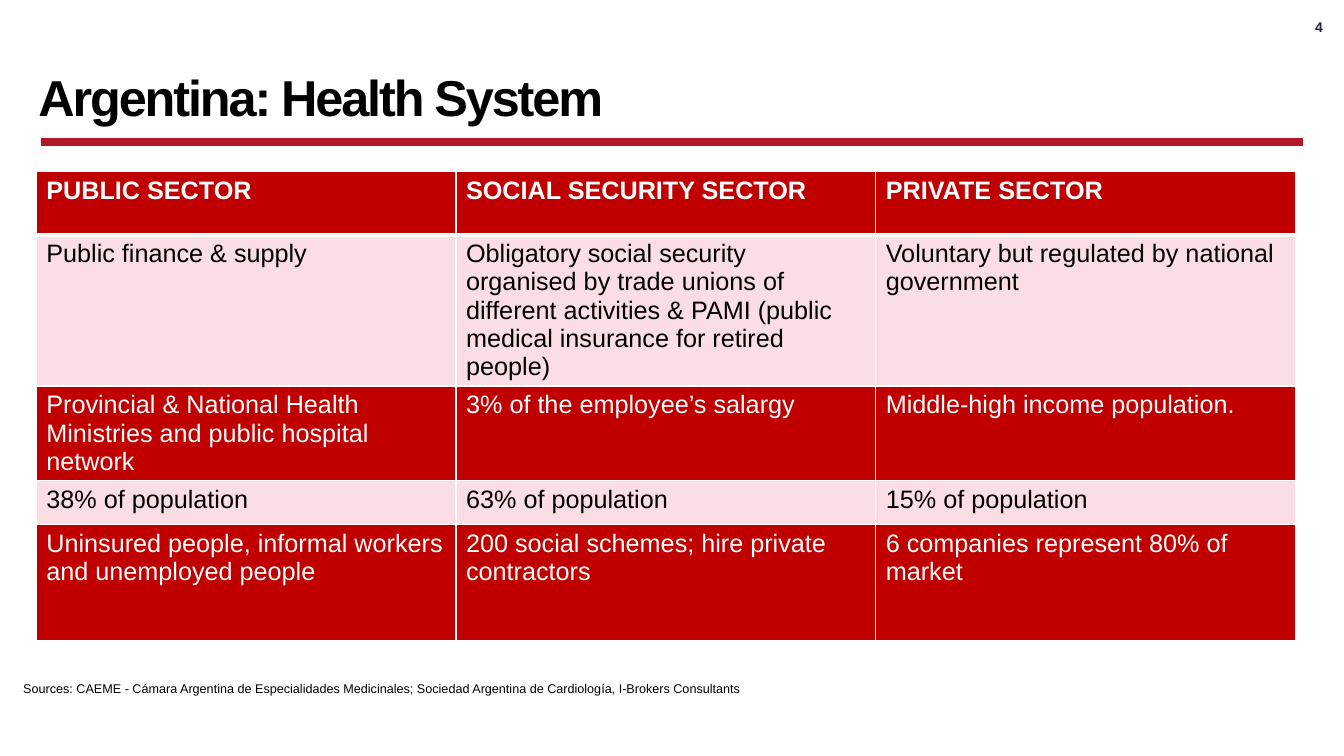
from lxml import etree
from pptx import Presentation
from pptx.dml.color import RGBColor
from pptx.enum.shapes import MSO_CONNECTOR
from pptx.enum.text import MSO_ANCHOR, MSO_AUTO_SIZE, PP_ALIGN
from pptx.oxml.ns import qn
from pptx.util import Inches, Pt

# Content
TITLE = "Argentina: Health System"
SLIDE_NUMBER = "4"
SOURCES = ("Sources: CAEME - Cámara Argentina de Especialidades Medicinales; "
           "Sociedad Argentina de Cardiología, I-Brokers Consultants")
SECTORS = [
    ("PUBLIC SECTOR", "SOCIAL SECURITY SECTOR", "PRIVATE SECTOR"),
    ("Public finance & supply",
     "Obligatory social security\norganised by trade unions of different activities "
     "& PAMI (public medical insurance for retired people)",
     "Voluntary but regulated by national government"),
    ("Provincial & National Health Ministries and public hospital network",
     "3% of the employee’s salargy",
     "Middle-high income population."),
    ("38% of population", "63% of population", "15% of population"),
    ("Uninsured people, informal workers and unemployed people",
     "200 social schemes; hire private contractors",
     "6 companies represent 80% of market"),
]

# Design
FONT = "Arial"
COLORS = {"red": "C00000", "pink": "FBDDE6", "white": "FFFFFF",
          "black": "000000", "rule": "B01925", "number": "241F46"}
TABLE_LEFT, TABLE_TOP, TABLE_WIDTH = 0.36, 1.7, 12.49
ROW_HEIGHTS = [0.63, 1.42, 0.89, 0.43, 1.16]


def color(name):
    return RGBColor.from_string(COLORS[name])


def add_text(paragraph, text, size, color_name, bold=False):
    run = paragraph.add_run()
    run.text = text
    run.font.name = FONT
    run.font.size = Pt(size)
    run.font.bold = bold
    run.font.color.rgb = color(color_name)
    return run


def place(shape, left, top, width, height):
    shape.left, shape.top = Inches(left), Inches(top)
    shape.width, shape.height = Inches(width), Inches(height)
    frame = shape.text_frame
    frame.word_wrap = True
    frame.auto_size = MSO_AUTO_SIZE.NONE
    frame.vertical_anchor = MSO_ANCHOR.MIDDLE
    return frame.paragraphs[0]


def set_borders(cell, widths):
    properties = cell._tc.get_or_add_tcPr()
    for position, (side, width) in enumerate(widths.items()):
        border = etree.Element(qn(f"a:{side}"), w=str(Pt(width)))
        fill = etree.SubElement(border, qn("a:solidFill"))
        etree.SubElement(fill, qn("a:srgbClr"), val=COLORS["white"])
        properties.insert(position, border)


presentation = Presentation()
presentation.slide_width, presentation.slide_height = Inches(13.33), Inches(7.5)
slide = presentation.slides.add_slide(presentation.slide_layouts[1])
title, sources = slide.shapes.title, slide.placeholders[1]

# Title
paragraph = place(title, 0.28, 0.65, 12.64, 0.68)
paragraph.alignment = PP_ALIGN.LEFT
paragraph.line_spacing = 0.9
run = add_text(paragraph, TITLE, 36, "black", bold=True)
run.font._element.set("spc", "-150")

# Sources line
paragraph = place(sources, 0.13, 6.66, 12.79, 0.35)
paragraph_properties = paragraph._p.get_or_add_pPr()
paragraph_properties.set("marL", "0")
paragraph_properties.set("indent", "0")
etree.SubElement(paragraph_properties, qn("a:buNone"))
paragraph.line_spacing = 0.9
paragraph.space_before = Pt(0)
add_text(paragraph, SOURCES, 9, "black")

# Slide number
number_box = slide.shapes.add_textbox(0, 0, 0, 0)
paragraph = place(number_box, 12.82, 0.18, 0.3, 0.17)
frame = number_box.text_frame
frame.margin_left = frame.margin_right = frame.margin_top = frame.margin_bottom = 0
paragraph.alignment = PP_ALIGN.RIGHT
add_text(paragraph, SLIDE_NUMBER, 10, "number", bold=True)

# Rule under the title
rule = slide.shapes.add_connector(MSO_CONNECTOR.STRAIGHT, Inches(0.41), Inches(1.41),
                                  Inches(12.92), Inches(1.41))
rule.line.color.rgb = color("rule")
rule.line.width = Pt(6)
etree.SubElement(rule._element.spPr, qn("a:effectLst"))

# Sector table: red and pink rows alternate
table = slide.shapes.add_table(
    len(SECTORS), len(SECTORS[0]), Inches(TABLE_LEFT), Inches(TABLE_TOP),
    Inches(TABLE_WIDTH), Inches(sum(ROW_HEIGHTS))).table
for row_index, (texts, height) in enumerate(zip(SECTORS, ROW_HEIGHTS)):
    table.rows[row_index].height = Inches(height)
    fill_name, text_name = ("pink", "black") if row_index % 2 else ("red", "white")
    for column_index, text in enumerate(texts):
        cell = table.cell(row_index, column_index)
        cell.fill.solid()
        cell.fill.fore_color.rgb = color(fill_name)
        set_borders(cell, {"lnL": 1, "lnR": 1,
                           "lnT": 3 if row_index == 1 else 1,
                           "lnB": 3 if row_index == 0 else 1})
        for line_index, line in enumerate(text.split("\n")):
            frame = cell.text_frame
            paragraph = frame.add_paragraph() if line_index else frame.paragraphs[0]
            add_text(paragraph, line, 18, text_name, bold=row_index == 0)

presentation.save("out.pptx")
